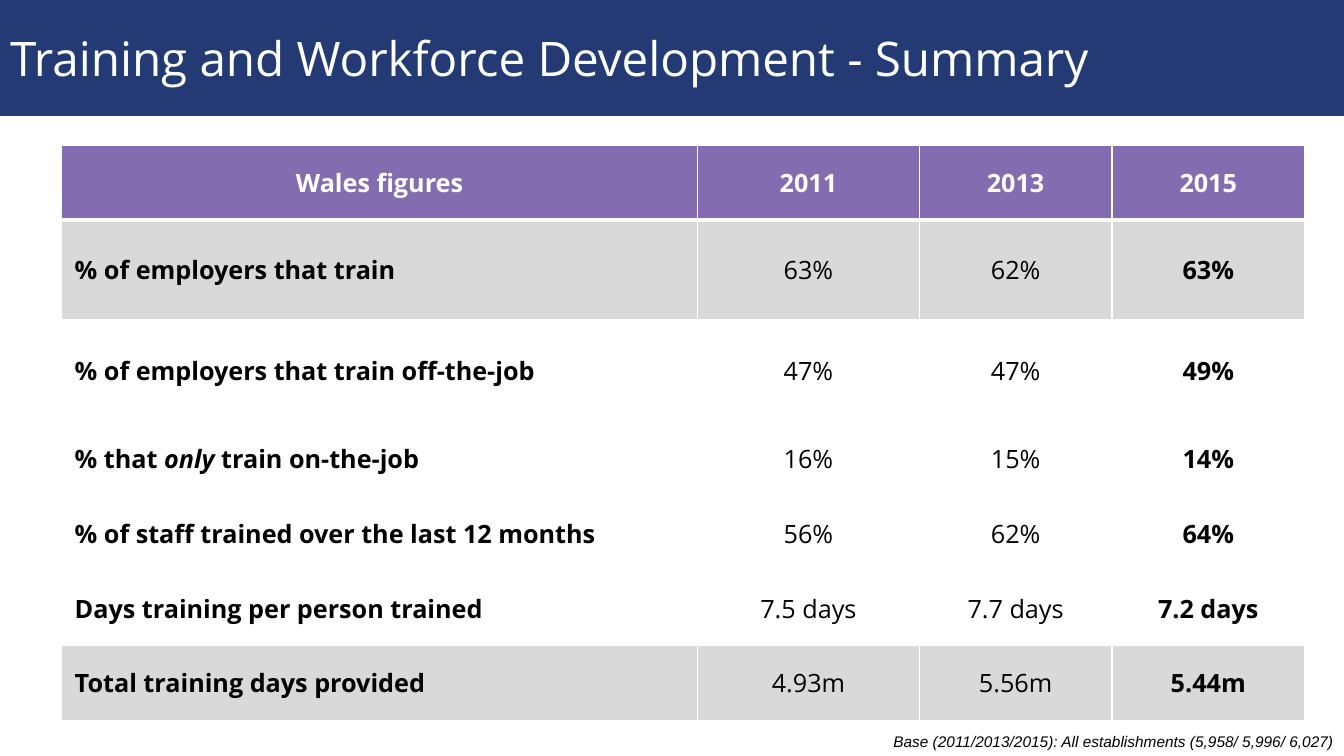
from lxml.etree import SubElement
from pptx import Presentation
from pptx.dml.color import RGBColor
from pptx.enum.text import MSO_ANCHOR as Anchor, PP_ALIGN as Align
from pptx.oxml.ns import qn
from pptx.util import Pt

TITLE = "Training and Workforce Development - Summary"
HEADINGS = ["Wales figures", "2011", "2013", "2015"]
# Labels are alternating upright and italic pieces.
MEASURES = [
    (["% of employers that train"], "63%", "62%", "63%"),
    (["% of employers that train off-the-job"], "47%", "47%", "49%"),
    (["% that ", "only ", "train on-the-job"], "16%", "15%", "14%"),
    (["% of staff trained over the last 12 months"], "56%", "62%", "64%"),
    (["Days training per person trained"], "7.5 days", "7.7 days", "7.2 days"),
    (["Total training days provided"], "4.93m", "5.56m", "5.44m"),
]
BASE_NOTE = "Base (2011/2013/2015): All establishments (5,958/ 5,996/ 6,027)"

COLORS = {"navy": "233A75", "purple": "836DB0", "grey": "D9D9D9",
          "white": "FFFFFF", "black": "000000"}
SLIDE_W, SLIDE_H = 960, 540
COLUMN_WIDTHS = [454.3, 158.4, 137.6, 137.6]
ROW_HEIGHTS = [53.3, 71.3, 72.7] + [53.3] * 4
SHADED_ROWS = {1, len(MEASURES)}
LAST_COLUMN = len(HEADINGS) - 1


def color(name):
    return RGBColor.from_string(COLORS[name])


def set_font(paragraph, family, size, color_name, bold=False, italic=None):
    font = paragraph.font
    font.name, font.size = family, Pt(size)
    font.bold, font.italic = bold, italic
    font.color.rgb = color(color_name)


def add_borders(cell, bottom, top):
    properties = cell._tc.get_or_add_tcPr()
    for side, width in (("L", 1), ("R", 1), ("T", top), ("B", bottom)):
        line = SubElement(properties, qn(f"a:ln{side}"), w=str(Pt(width)))
        fill = SubElement(line, qn("a:solidFill"))
        SubElement(fill, qn("a:srgbClr"), val=COLORS["white"])


def fill_cell(cell, row, column, pieces):
    is_header = row == 0
    cell.vertical_anchor = Anchor.MIDDLE
    cell.margin_left = cell.margin_right = Pt(9.4)
    cell.margin_top = cell.margin_bottom = Pt(3.6)
    add_borders(cell, bottom=3 if is_header else 1, top=3 if row == 1 else 1)
    if is_header or row in SHADED_ROWS:
        cell.fill.solid()
        cell.fill.fore_color.rgb = color("purple" if is_header else "grey")
    else:
        cell.fill.background()
    paragraph = cell.text_frame.paragraphs[0]
    paragraph.alignment = Align.CENTER if is_header or column else Align.LEFT
    set_font(paragraph, "Open Sans", 18, "white" if is_header else "black",
             bold=is_header or column in (0, LAST_COLUMN))
    for index, piece in enumerate(pieces):
        run = paragraph.add_run()
        run.text = piece
        if index % 2:
            run.font.italic = True


def add_title(slide):
    title = slide.shapes.title
    title.left, title.top, title.width, title.height = Pt(0), Pt(0), Pt(SLIDE_W), Pt(82.8)
    title.fill.solid()
    title.fill.fore_color.rgb = color("navy")
    title.text_frame.text = TITLE
    title.text_frame.vertical_anchor = Anchor.MIDDLE
    paragraph = title.text_frame.paragraphs[0]
    paragraph.alignment = Align.LEFT
    set_font(paragraph, "Open Sans", 34, "white")


def add_summary_table(slide):
    rows = [([heading] for heading in HEADINGS)]
    rows += [[label] + [[value] for value in values] for label, *values in MEASURES]
    table = slide.shapes.add_table(
        len(ROW_HEIGHTS), len(COLUMN_WIDTHS), Pt(44), Pt(104),
        Pt(sum(COLUMN_WIDTHS)), Pt(sum(ROW_HEIGHTS))).table
    for column, width in zip(table.columns, COLUMN_WIDTHS):
        column.width = Pt(width)
    for row, height in zip(table.rows, ROW_HEIGHTS):
        row.height = Pt(height)
    for r, row in enumerate(rows):
        for c, pieces in enumerate(row):
            fill_cell(table.cell(r, c), r, c, pieces)


def add_base_note(slide):
    note = slide.shapes.add_textbox(Pt(81), Pt(519.2), Pt(879), Pt(20.6)).text_frame
    note.word_wrap = True
    note.text = BASE_NOTE
    paragraph = note.paragraphs[0]
    paragraph.alignment = Align.RIGHT
    set_font(paragraph, "Arial", 11, "black", italic=True)


def main():
    deck = Presentation()
    deck.slide_width, deck.slide_height = Pt(SLIDE_W), Pt(SLIDE_H)
    slide = deck.slides.add_slide(deck.slide_layouts[5])
    add_title(slide)
    add_summary_table(slide)
    add_base_note(slide)
    deck.save("out.pptx")


if __name__ == "__main__":
    main()
